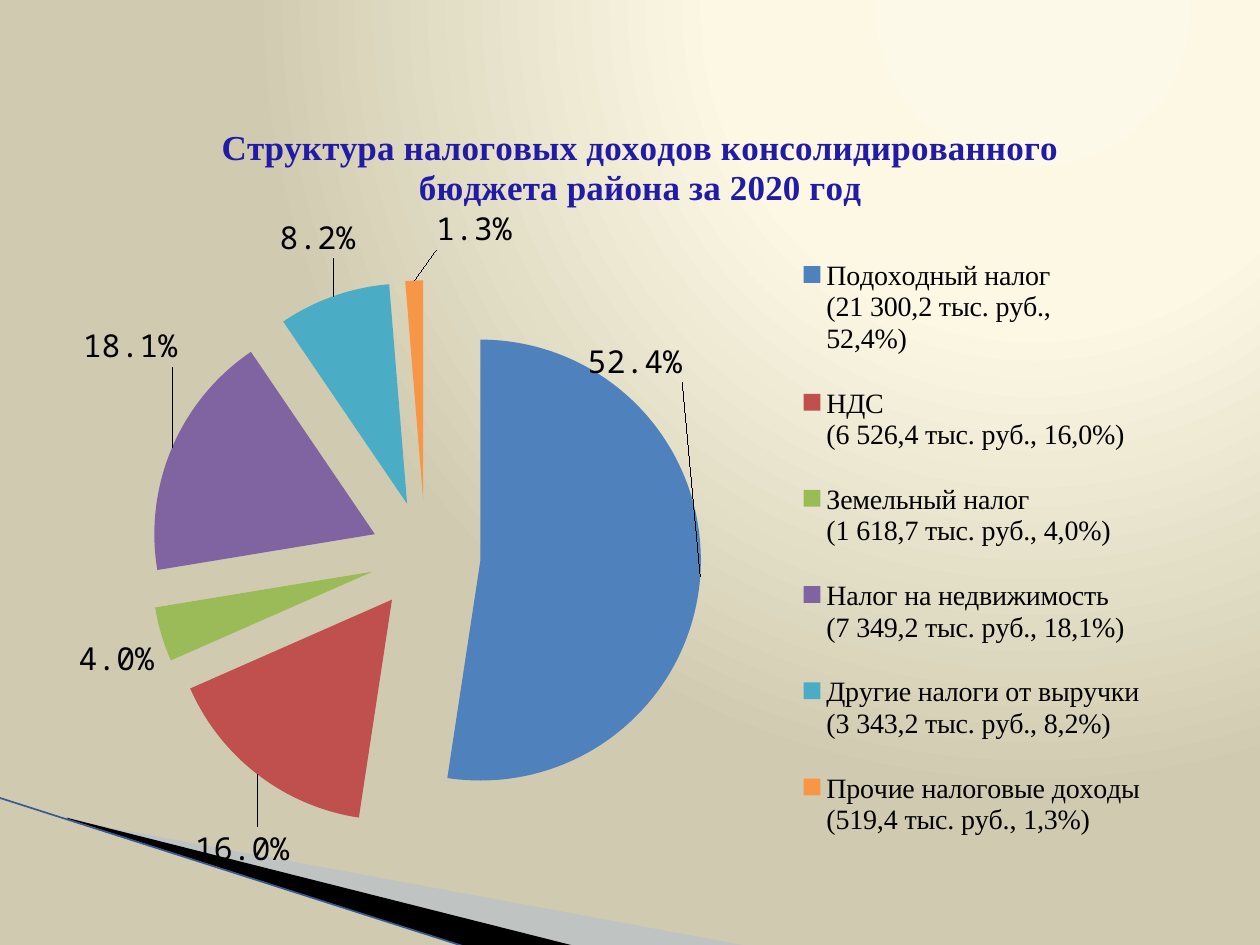
"""Build the slide with the exploded pie of district tax revenue for 2020."""
from lxml.etree import SubElement
from pptx import Presentation
from pptx.chart.data import CategoryChartData
from pptx.dml.color import RGBColor
from pptx.enum.chart import XL_CHART_TYPE as CT, XL_LABEL_POSITION as LP, XL_LEGEND_POSITION as LEG
from pptx.oxml import parse_xml
from pptx.oxml.ns import nsdecls, qn
from pptx.util import Inches, Pt

BLACK = RGBColor(0, 0, 0)
NAVY = RGBColor(0x22, 0x1B, 0xA5)
SILVER = RGBColor(0xA7, 0xB9, 0xDB)
EDGE = RGBColor(0x36, 0x5A, 0x92)
TITLE = "Структура налоговых доходов консолидированного бюджета района за 2020 год"
TAXES = [
    ("Подоходный налог\n(21 300,2 тыс. руб.,\n52,4%)", 0.524, RGBColor(0x4F, 0x81, 0xBD), (-0.1, -0.28)),
    ("НДС\n(6 526,4 тыс. руб., 16,0%)", 0.16, RGBColor(0xC0, 0x50, 0x4D), (0.03, 0.06)),
    ("Земельный налог\n(1 618,7 тыс. руб., 4,0%)", 0.04, RGBColor(0x9B, 0xBB, 0x59), None),
    ("Налог на недвижимость\n(7 349,2 тыс. руб., 18,1%)", 0.181, RGBColor(0x80, 0x64, 0xA2), (0.01, -0.1)),
    ("Другие налоги от выручки\n(3 343,2 тыс. руб., 8,2%)", 0.082, RGBColor(0x4B, 0xAC, 0xC6), (0.02, -0.04)),
    ("Прочие налоговые доходы\n(519,4 тыс. руб., 1,3%)", 0.013, RGBColor(0xF7, 0x96, 0x46), (0.05, -0.03)),
]
STOPS = [(0, "FDF9E8"), (40, "FCF8E4"), (100, "D0CBB0")]
WEDGES = [
    ([(0.55, 6.51), (5.95, 7.51), (4.56, 7.51), (0.55, 6.5)], SILVER, 40),
    ([(0.53, 6.49), (4.57, 7.51), (3.72, 7.52), (0.54, 6.5)], BLACK, 100),
]


def set_layout(parent, index, **parts):
    """Place a chart part by shares of the chart's size."""
    for old in parent.findall(qn("c:layout")):
        parent.remove(old)
    tags = "".join(f'<c:{k} val="{v}"/>' for k, v in parts.items())
    parent.insert(index, parse_xml(
        f'<c:layout {nsdecls("c")}><c:manualLayout>{tags}</c:manualLayout></c:layout>'))


prs = Presentation()
prs.slide_width, prs.slide_height = Inches(10), Inches(7.5)
s = prs.slides.add_slide(prs.slide_layouts[6])
stops = "".join(f'<a:gs pos="{pos * 1000}"><a:srgbClr val="{c}"/></a:gs>' for pos, c in STOPS)
s.element.cSld.insert(0, parse_xml(
    f'<p:bg {nsdecls("p", "a")}><p:bgPr><a:gradFill><a:gsLst>{stops}</a:gsLst><a:path path="circle">'
    '<a:fillToRect l="65000" t="0" r="0" b="98000"/></a:path></a:gradFill><a:effectLst/></p:bgPr></p:bg>'))

for points, color, alpha in WEDGES:
    fb = s.shapes.build_freeform(*map(Inches, points[0]))
    fb.add_line_segments([(Inches(x), Inches(y)) for x, y in points[1:]])
    sp = fb.convert_to_shape()
    sp.shadow.inherit = False
    sp.fill.solid()
    sp.fill.fore_color.rgb = color
    sp.line.fill.background()
    clr = sp.fill._xPr.find(".//" + qn("a:srgbClr"))
    SubElement(clr, qn("a:alpha"), val=str(alpha * 1000))

edge = s.shapes.add_connector(1, Inches(-0.01), Inches(6.33), Inches(3.71), Inches(7.52))
edge.line.color.rgb = EDGE
edge.line.width = Pt(0.95)
SubElement(edge._element.spPr, qn("a:effectLst"))

data = CategoryChartData(number_format="0.0%")
data.categories = [name for name, *rest in TAXES]
data.add_series("Series 1", [share for name, share, *rest in TAXES])
chart = s.shapes.add_chart(CT.PIE, Inches(0.28), Inches(0.76), Inches(9.53), Inches(6.14), data).chart
chart.font.size, chart.font.name, chart.font.color.rgb = Pt(18), "Noto Sans Mono", BLACK

chart.has_title = True
p = chart.chart_title.text_frame.paragraphs[0]
p.text = TITLE
p.font.size, p.font.bold, p.font.name = Pt(20), True, "Times New Roman"
p.font.color.rgb = NAVY
set_layout(chart.chart_title._element, 1, xMode="edge", yMode="edge", x=0.15, y=0.03)

chart.has_legend = True
legend = chart.legend
legend.position, legend.include_in_layout = LEG.RIGHT, False
legend.font.size, legend.font.name = Pt(16), "Times New Roman"
set_layout(legend._element, 1, xMode="edge", yMode="edge", x=0.62, y=0.17, w=0.32, h=0.83)

plot = chart.plots[0]
plot.vary_by_categories = True
set_layout(plot._element.getparent(), 0, layoutTarget="inner", xMode="edge", yMode="edge",
           x=0.14, y=0.31, w=0.37, h=0.57)
series = plot.series[0]
labels = series.data_labels
labels.show_value, labels.position = True, LP.OUTSIDE_END
labels.number_format, labels.number_format_is_linked = "0.0%", False
for i, (name, share, color, shift) in enumerate(TAXES):
    point = series.points[i]
    point.format.fill.solid()
    point.format.fill.fore_color.rgb = color
    dpt = series._element.get_or_add_dPt_for_point(i)
    dpt.find(qn("c:spPr")).addprevious(parse_xml(f'<c:explosion {nsdecls("c")} val="25"/>'))
    if shift:
        point.data_label.position = LP.OUTSIDE_END
        label = labels._element.findall(qn("c:dLbl"))[-1]
        set_layout(label, 1, x=shift[0], y=shift[1])

prs.save("out.pptx")
